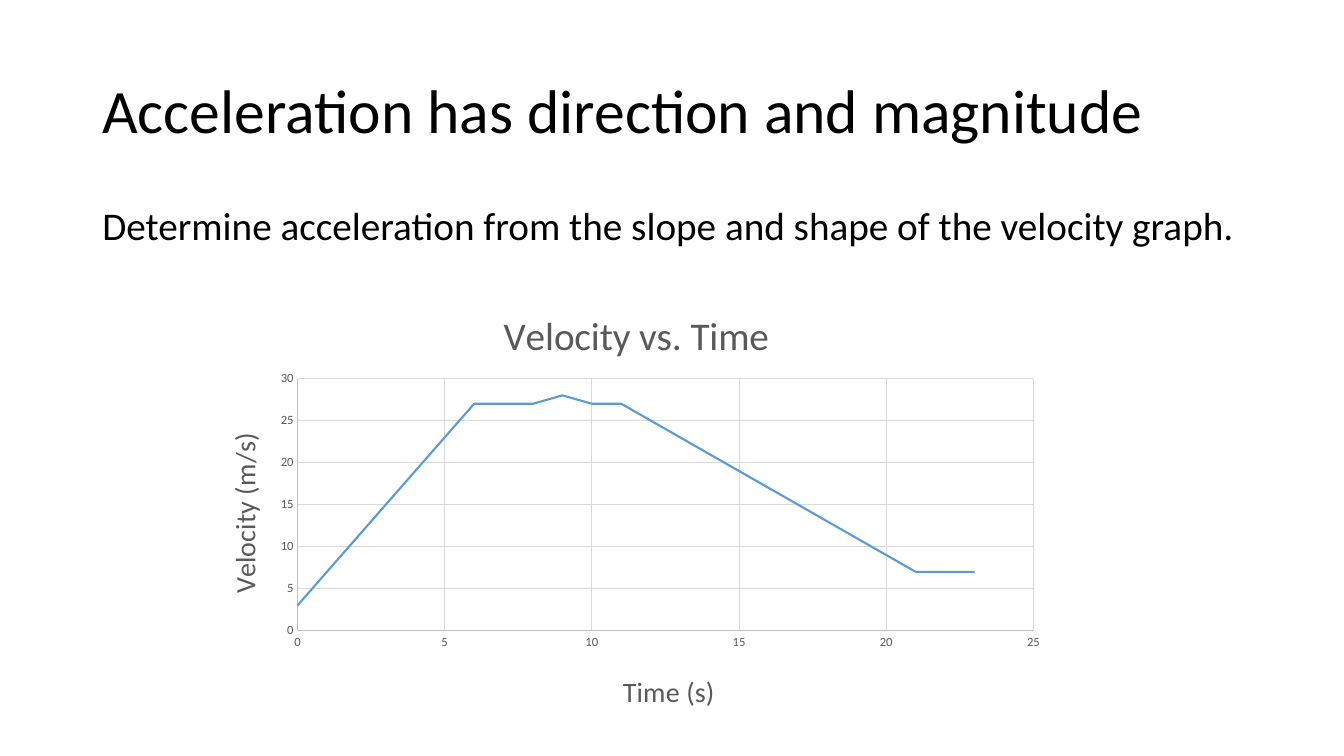
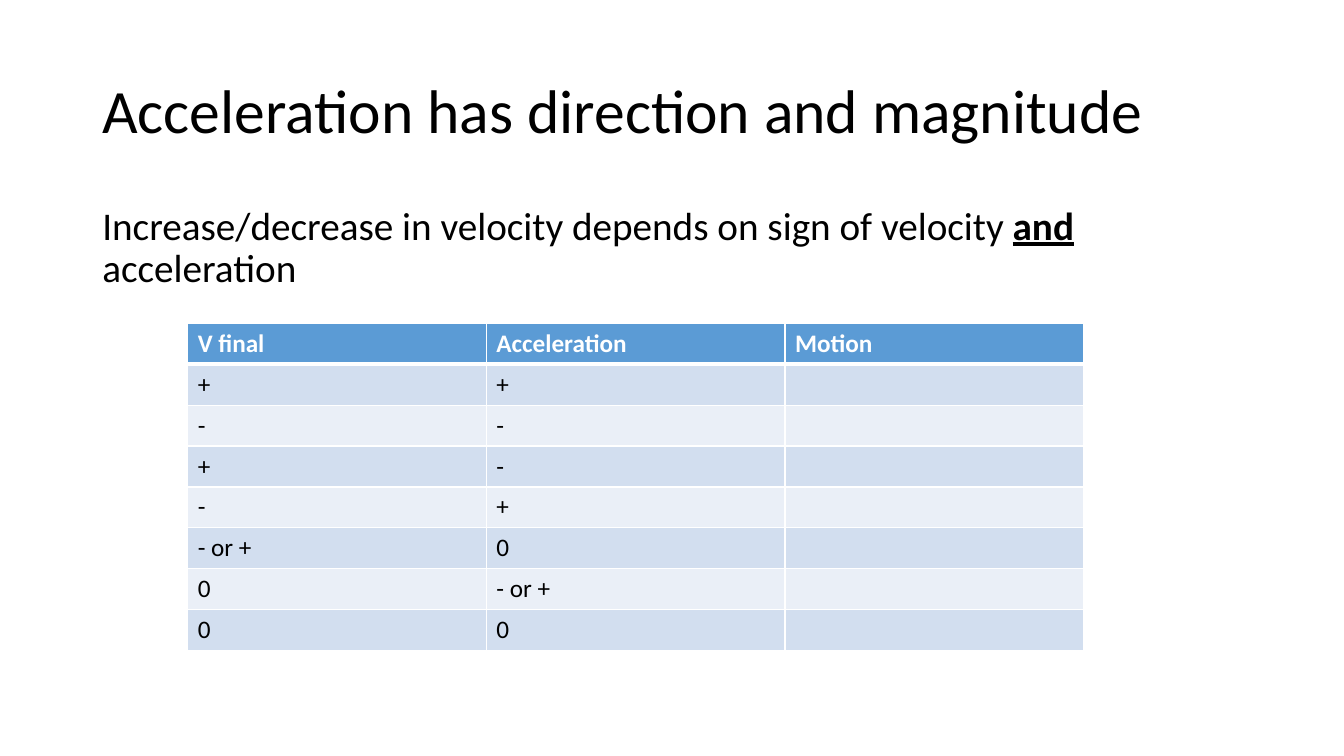
from lxml import etree
from pptx import Presentation
from pptx.chart.data import XyChartData
from pptx.dml.color import RGBColor
from pptx.enum.chart import XL_CHART_TYPE, XL_TICK_MARK
from pptx.enum.text import MSO_ANCHOR
from pptx.oxml.ns import qn
from pptx.util import Cm, Pt

SCATTER = XL_CHART_TYPE.XY_SCATTER_SMOOTH_NO_MARKERS
NO_TICK = XL_TICK_MARK.NONE
TOP, MIDDLE = MSO_ANCHOR.TOP, MSO_ANCHOR.MIDDLE

FONT = "Calibri"
BLACK = RGBColor(0x00, 0x00, 0x00)
WHITE = RGBColor(0xFF, 0xFF, 0xFF)
BLUE = RGBColor(0x5B, 0x9B, 0xD5)
BANDS = (RGBColor(0xD2, 0xDE, 0xEF), RGBColor(0xEA, 0xEF, 0xF7))
GRAY = RGBColor(0x59, 0x59, 0x59)
AXIS_GRAY = RGBColor(0xBF, 0xBF, 0xBF)
GRID_GRAY = RGBColor(0xD9, 0xD9, 0xD9)

TITLE = "Acceleration has direction and magnitude"
VELOCITIES = (3, 7, 11, 15, 19, 23, 27, 27, 27, 28, 27, 27,
              25, 23, 21, 19, 17, 15, 13, 11, 9, 7, 7, 7)
MOTION_ROWS = (
    ("V final", "Acceleration", "Motion"),
    ("+", "+", ""),
    ("-", "-", ""),
    ("+", "-", ""),
    ("-", "+", ""),
    ("- or +", "0", ""),
    ("0", "- or +", ""),
    ("0", "0", ""),
)


def set_font(font, size, color, bold=False):
    font.name = FONT
    font.size = Pt(size)
    font.bold = bold
    font.color.rgb = color


def set_line(line, color, width):
    line.color.rgb = color
    line.width = Pt(width)


def add_text(s, top, height, runs, size, anchor=TOP, space_before=0):
    """Add one paragraph; runs are (text, emphasized) pairs."""
    tf = s.shapes.add_textbox(Cm(2.33), Cm(top), Cm(29.21), Cm(height)).text_frame
    tf.word_wrap = True
    tf.vertical_anchor = anchor
    p = tf.paragraphs[0]
    p.line_spacing = 0.9
    p.space_before = Pt(space_before)
    set_font(p.font, size, BLACK)
    for text, emphasized in runs:
        r = p.add_run()
        r.text = text
        if emphasized:
            r.font.bold = r.font.underline = True


def add_content_slide(prs, body_runs):
    s = prs.slides.add_slide(prs.slide_layouts[6])
    add_text(s, 1.01, 3.68, [(TITLE, False)], 44, MIDDLE)
    add_text(s, 5.07, 12.09, body_runs, 28, space_before=10)
    return s


def set_layout(parent, index, **values):
    """Place a chart part by fractions of the chart's size."""
    old = parent.find(qn("c:layout"))
    if old is not None:
        parent.remove(old)
    layout = etree.Element(qn("c:layout"))
    manual = etree.SubElement(layout, qn("c:manualLayout"))
    if "w" in values:
        etree.SubElement(manual, qn("c:layoutTarget")).set("val", "inner")
    for mode in ("xMode", "yMode"):
        etree.SubElement(manual, qn("c:" + mode)).set("val", "edge")
    for key, value in values.items():
        etree.SubElement(manual, qn("c:" + key)).set("val", str(value))
    parent.insert(index, layout)


def style_chart_title(title, text, size, x, y, rotation=0):
    p = title.text_frame.paragraphs[0]
    p.text = text
    set_font(p.font, size, GRAY)
    body = title._element.find(".//" + qn("a:bodyPr"))
    body.set("rot", str(rotation * 60000))
    body.set("vert", "horz")
    set_layout(title._element, 1, x=x, y=y)


def style_axis(axis, maximum):
    axis.minimum_scale, axis.maximum_scale, axis.major_unit = 0, maximum, 5
    axis.major_tick_mark = axis.minor_tick_mark = NO_TICK
    axis.has_major_gridlines = True
    set_line(axis.major_gridlines.format.line, GRID_GRAY, 0.75)
    set_line(axis.format.line, AXIS_GRAY, 0.75)
    set_font(axis.tick_labels.font, 9, GRAY)


def add_velocity_chart(s):
    data = XyChartData()
    points = data.add_series("Series 1")
    for time, velocity in enumerate(VELOCITIES):
        points.add_data_point(time, velocity)
    chart = s.shapes.add_chart(SCATTER, Cm(4.88), Cm(6.93), Cm(21.82),
                               Cm(11.35), data).chart
    chart.has_legend = False
    set_font(chart.font, 10, BLACK)
    plot = chart.plots[0]
    plot.vary_by_categories = False
    series = plot.series[0]
    series.smooth = True
    set_line(series.format.line, BLUE, 1.5)

    time_axis, velocity_axis = chart.category_axis, chart.value_axis
    style_axis(time_axis, 25)
    style_axis(velocity_axis, 30)
    style_chart_title(chart.chart_title, "Velocity vs. Time", 28, 0.35, 0.06)
    style_chart_title(time_axis.axis_title, "Time (s)", 20, 0.49, 0.87)
    style_chart_title(velocity_axis.axis_title, "Velocity (m/s)", 20, 0.03, 0.34, -90)
    plot_area = chart._chartSpace.find(".//" + qn("c:plotArea"))
    set_layout(plot_area, 0, x=0.12, y=0.23, w=0.85, h=0.56)


def set_borders(cell, **widths):
    tc_pr = cell._tc.get_or_add_tcPr()
    for side in "LRTB":
        line = etree.SubElement(tc_pr, qn("a:ln" + side))
        line.set("w", str(Pt(widths.get(side, 1))))
        fill = etree.SubElement(line, qn("a:solidFill"))
        etree.SubElement(fill, qn("a:srgbClr")).set("val", str(WHITE))


def add_motion_table(s):
    row_count, column_count = len(MOTION_ROWS), len(MOTION_ROWS[0])
    table = s.shapes.add_table(row_count, column_count, Cm(4.73), Cm(8.15),
                               Cm(22.58), Cm(8.24)).table
    for i, texts in enumerate(MOTION_ROWS):
        header = i == 0
        for j, text in enumerate(texts):
            cell = table.cell(i, j)
            set_borders(cell, T=3 if i == 1 else 1, B=3 if header else 1)
            cell.fill.solid()
            cell.fill.fore_color.rgb = BLUE if header else BANDS[(i - 1) % 2]
            p = cell.text_frame.paragraphs[0]
            p.text = text
            set_font(p.font, 18, WHITE if header else BLACK, header)


def main():
    prs = Presentation()
    prs.slide_width, prs.slide_height = Cm(33.87), Cm(19.05)
    s = add_content_slide(prs, [
        ("Determine acceleration from the slope and shape of the velocity graph.", False),
    ])
    add_velocity_chart(s)
    s = add_content_slide(prs, [
        ("Increase/decrease in velocity depends on sign of velocity ", False),
        ("and", True),
        (" acceleration", False),
    ])
    add_motion_table(s)
    prs.save("out.pptx")


if __name__ == "__main__":
    main()
